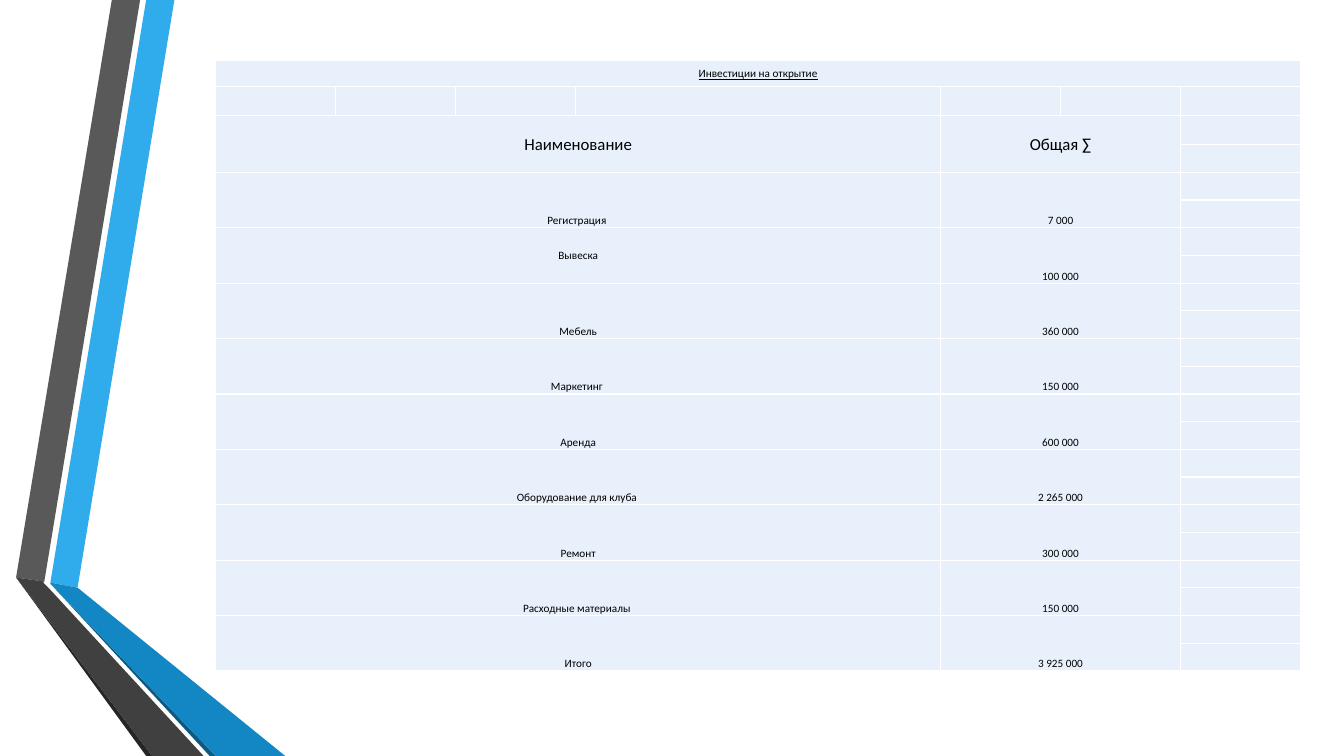
import pptx
import pptx.dml.color
import pptx.enum.text
import pptx.util
import pptx.oxml
import pptx.oxml.ns

Inches = pptx.util.Inches
RGB = pptx.dml.color.RGBColor
ANCHOR = pptx.enum.text.MSO_ANCHOR
CENTER = pptx.enum.text.PP_ALIGN.CENTER

BLACK = RGB(0x00, 0x00, 0x00)
PALE = RGB(0xE8, 0xF1, 0xFB)
SKY = RGB(0x30, 0xAC, 0xEC)
BLUE = RGB(0x12, 0x87, 0xC3)
NAVY = RGB(0x0C, 0x5A, 0x82)
GRAY = RGB(0x59, 0x59, 0x59)
DARK = RGB(0x40, 0x40, 0x40)
SOOT = RGB(0x26, 0x26, 0x26)

# Ribbon facets, in inches from the corner of the ribbon box
FACETS = [
    (SKY, [(0.34, 5.78), (0.61, 5.83), (1.57, 0), (1.29, 0)]),
    (GRAY, [(1.23, 0), (0.95, 0), (0, 5.73), (0.28, 5.77)]),
    (SOOT, [(0, 5.73), (1.29, 7.5), (1.35, 7.5)]),
    (NAVY, [(0.34, 5.79), (1.92, 7.5), (1.98, 7.5)]),
    (BLUE, [(0.34, 5.78), (0.34, 5.79), (1.98, 7.5), (2.67, 7.5),
            (0.61, 5.83)]),
    (DARK, [(1.86, 7.5), (0.32, 5.83), (0.27, 5.78), (0.28, 5.77),
            (0, 5.73), (1.35, 7.5)]),
]

TITLE = "Инвестиции на открытие"
HEADS = ("Наименование", "Общая ∑")
COSTS = [
    ("Регистрация ", "7 000"),
    ("Вывеска", "100 000"),
    ("Мебель", "360 000"),
    ("Маркетинг ", "150 000"),
    ("Аренда", "600 000"),
    ("Оборудование для клуба ", "2 265 000"),
    ("Ремонт", "300 000"),
    ("Расходные материалы ", "150 000"),
    ("Итого", "3 925 000"),
]
SIDE, WIDE = 1.19, 3.62
TOPS = [0.26, 0.29, 0.28, 0.28]


def write(cell, text, size=8, under=False, anchor=ANCHOR.BOTTOM):
    cell.vertical_anchor = anchor
    para = cell.text_frame.paragraphs[0]
    para.alignment = CENTER
    run = para.add_run()
    run.text = text
    font = run.font
    font.name = "Calibri"
    font.size = pptx.util.Pt(size)
    font.underline = under
    font.color.rgb = BLACK


def style(cell):
    """White one-point borders, pale fill, tight margins, small empty lines."""
    props = cell._tc.get_or_add_tcPr()
    for side in "LRTB":
        props.append(pptx.oxml.parse_xml(
            f'<a:ln{side} {pptx.oxml.ns.nsdecls("a")} w="12700"><a:solidFill>'
            f'<a:srgbClr val="FFFFFF"/></a:solidFill></a:ln{side}>'))
    cell.fill.solid()
    cell.fill.fore_color.rgb = PALE
    cell.margin_left = cell.margin_right = cell.margin_top = Inches(0.01)
    cell.margin_bottom = 0
    para = cell.text_frame.paragraphs[0]
    para._p.get_or_add_endParaRPr().set("sz", "800")


def ribbon(slide, left, top):
    for color, points in FACETS:
        spots = [(Inches(left + x), Inches(top + y)) for x, y in points]
        outline = slide.shapes.build_freeform(*spots[0])
        outline.add_line_segments(spots[1:], close=True)
        facet = outline.convert_to_shape()
        facet.shadow.inherit = False
        facet.fill.solid()
        facet.fill.fore_color.rgb = color
        facet.line.fill.background()


def budget(slide, left, top, width, height):
    count = len(TOPS) + 2 * (len(COSTS))
    table = slide.shapes.add_table(
        count, 7, Inches(left), Inches(top), Inches(width), Inches(height)).table
    table.first_row = table.horz_banding = False

    # Grid: one wide column, equal rows below the heading
    for index, col in enumerate(table.columns):
        col.width = Inches(WIDE if index == 3 else SIDE)
    rest = (height - sum(TOPS)) / (2 * len(COSTS))
    for index, row in enumerate(table.rows):
        row.height = Inches(TOPS[index] if index < len(TOPS) else rest)
    for cell in table.iter_cells():
        style(cell)

    # Title across the whole table
    table.cell(0, 0).merge(table.cell(0, 6))
    write(table.cell(0, 0), TITLE, under=True, anchor=ANCHOR.MIDDLE)

    # Each entry is two rows tall: name over four columns, sum over two
    for index, (name, total) in enumerate([HEADS] + COSTS):
        row = 2 + 2 * index
        table.cell(row, 0).merge(table.cell(row + 1, 3))
        table.cell(row, 4).merge(table.cell(row + 1, 5))
        head = index == 0
        size = 12 if head else 8
        middle = head or name == "Вывеска"
        write(table.cell(row, 0), name, size=size,
              anchor=ANCHOR.MIDDLE if middle else ANCHOR.BOTTOM)
        write(table.cell(row, 4), total, size=size,
              anchor=ANCHOR.MIDDLE if head else ANCHOR.BOTTOM)


def main():
    deck = pptx.Presentation()
    deck.slide_width = Inches(13.33)
    deck.slide_height = Inches(7.5)
    slide = deck.slides.add_slide(deck.slide_layouts[6])
    ribbon(slide, 0.16, 0)
    budget(slide, 2.14, 0.6, 10.76, 6.06)
    deck.save("out.pptx")


if __name__ == "__main__":
    main()
